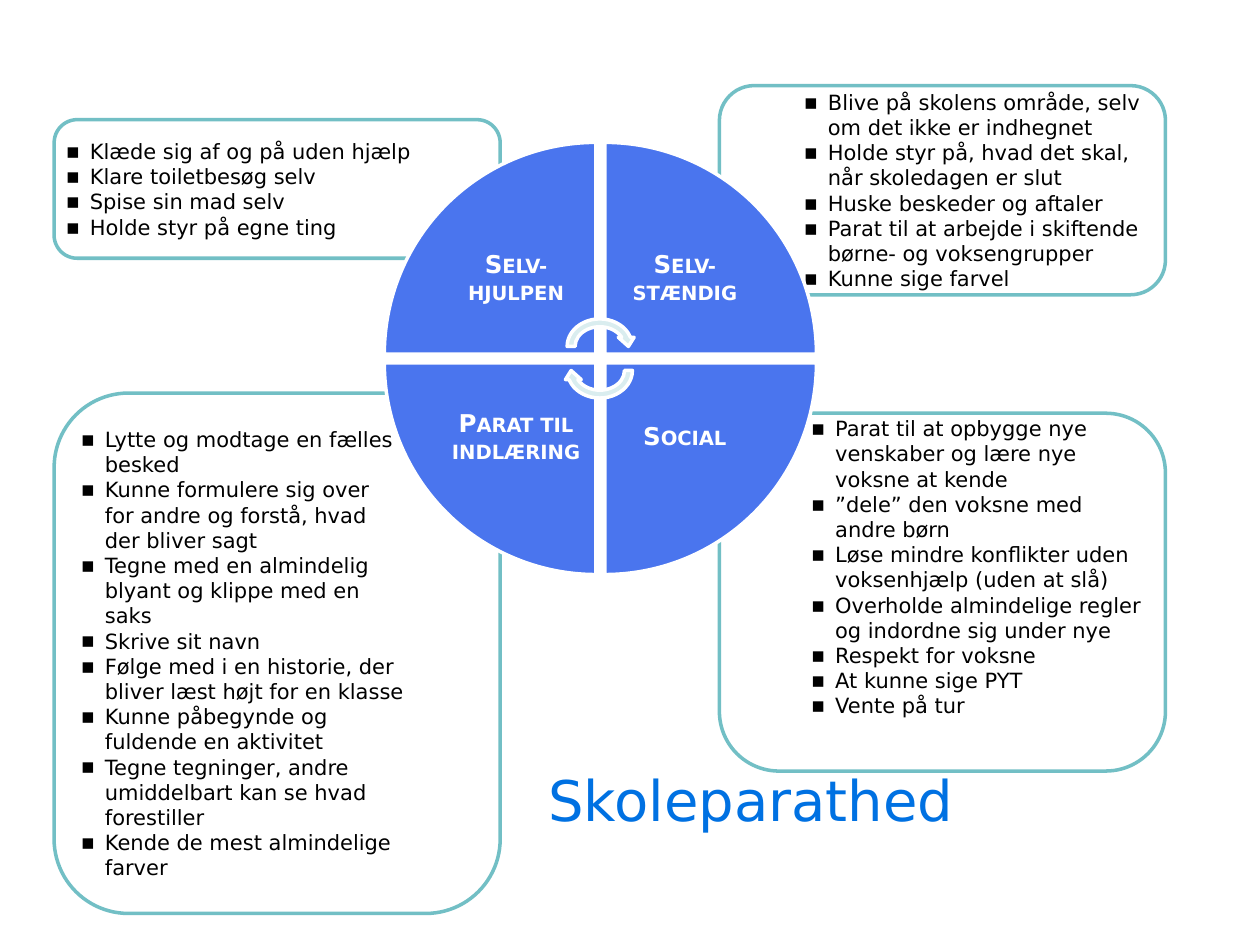
from lxml.etree import SubElement
from pptx import Presentation
from pptx.dml.color import RGBColor
from pptx.enum.shapes import MSO_SHAPE
from pptx.enum.text import MSO_ANCHOR, PP_ALIGN
from pptx.oxml.ns import qn
from pptx.util import Inches, Pt

THEME = {
    "font": "DejaVu Sans",
    "title": "0071E2", "ink": "000000", "paper": "FFFFFF",
    "frame": "72BFC5", "wedge": "4A75EE", "arrow": "DAEDEF",
    "title_pt": 32, "label_pt": 14, "list_pt": 12, "line_pt": 2,
}
TITLE = "Skoleparathed"

# (column, row, label, top, height, bottom inset, points)
PARTS = [
    (0, 0, "Selv-hjulpen", 0.95, 1.1, 0.04, [
        "Klæde sig af og på uden hjælp",
        "Klare toiletbesøg selv",
        "Spise sin mad selv",
        "Holde styr på egne ting"]),
    (0, 1, "Parat til indlæring", 3.12, 4.13, 0.04, [
        "Lytte og modtage en fælles besked",
        "Kunne formulere sig over for andre og forstå, hvad der bliver sagt",
        "Tegne med en almindelig blyant og klippe med en saks",
        "Skrive sit navn",
        "Følge med i en historie, der bliver læst højt for en klasse",
        "Kunne påbegynde og fuldende en aktivitet",
        "Tegne tegninger, andre umiddelbart kan se hvad forestiller",
        "Kende de mest almindelige farver"]),
    (1, 0, "Selv-stændig", 0.68, 1.66, 0.04, [
        "Blive på skolens område, selv om det ikke er indhegnet",
        "Holde styr på, hvad det skal, når skoledagen er slut",
        "Huske beskeder og aftaler",
        "Parat til at arbejde i skiftende børne- og voksengrupper",
        "Kunne sige farvel"]),
    (1, 1, "Social", 3.28, 2.84, 0.44, [
        "Parat til at opbygge nye venskaber og lære nye voksne at kende",
        "”dele” den voksne med andre børn",
        "Løse mindre konflikter uden voksenhjælp (uden at slå)",
        "Overholde almindelige regler og indordne sig under nye",
        "Respekt for voksne",
        "At kunne sige PYT",
        "Vente på tur"]),
]

CARD_X, CARD_W = (0.43, 5.71), 3.54
WHEEL_X, WHEEL_Y = 3.05, 1.13
WEDGE, STEP, LABEL = 1.68, 1.75, 1.19
ARROW_X, ARROW_W, ARROW_H = 4.47, 0.58, 0.5
ARROWS = [(2.5, 0), (2.69, 180)]
TURN = {(0, 0): 0, (1, 0): 90, (1, 1): 180, (0, 1): 270}


def color(key):
    return RGBColor.from_string(THEME[key])


def draw(home, kind, box, fill, line, turn=0):
    shape = home.add_shape(kind, *map(Inches, box))
    shape.shadow.inherit = False
    shape.fill.solid()
    shape.fill.fore_color.rgb = color(fill)
    shape.line.color.rgb = color(line)
    shape.line.width = Pt(THEME["line_pt"])
    shape.rotation = turn
    return shape


def setup(shape, left, top, right, bottom):
    """Wrap and centre the text vertically inside the given insets."""
    frame = shape.text_frame
    frame.word_wrap = True
    frame.vertical_anchor = MSO_ANCHOR.MIDDLE
    frame.margin_left, frame.margin_top = Inches(left), Inches(top)
    frame.margin_right, frame.margin_bottom = Inches(right), Inches(bottom)
    return frame


def write(para, text, size, ink, align=PP_ALIGN.CENTER):
    para.alignment = align
    run = para.add_run()
    run.text = text
    run.font.name = THEME["font"]
    run.font.size = Pt(THEME[size])
    run.font.color.rgb = color(ink)
    return run


def bullet(para):
    props = para._p.get_or_add_pPr()
    props.set("marL", str(Inches(0.19)))
    props.set("indent", str(Inches(-0.19)))
    SubElement(props, qn("a:buFont"), typeface=THEME["font"])
    SubElement(props, qn("a:buChar"), char="▪")


def card(home, col, top, high, foot, points):
    shape = draw(home, MSO_SHAPE.ROUNDED_RECTANGLE,
                 (CARD_X[col], top, CARD_W, high), "paper", "frame")
    left, right = ((0.04, 0.59), (0.59, 0.04))[col]
    frame = setup(shape, left, 0.04, right, foot)
    for i, point in enumerate(points):
        para = frame.add_paragraph() if i else frame.paragraphs[0]
        bullet(para)
        write(para, point, "list_pt", "ink", PP_ALIGN.LEFT)


def sector(home, col, row, label):
    x, y = WHEEL_X + col * STEP, WHEEL_Y + row * STEP
    draw(home, MSO_SHAPE.PIE_WEDGE, (x, y, WEDGE, WEDGE),
         "wedge", "paper", TURN[col, row])
    # The label sits in the corner nearest the hub.
    inner = WEDGE - LABEL
    spot = (x + (1 - col) * inner, y + (1 - row) * inner, LABEL, LABEL)
    text = home.add_textbox(*map(Inches, spot))
    frame = setup(text, 0.08 * col, 0.12, 0.08 * (1 - col), 0.12)
    para = frame.paragraphs[0]
    para.line_spacing = 0.9
    run = write(para, label, "label_pt", "paper")
    run.font.bold = True
    run.font._element.set("cap", "small")


def main():
    deck = Presentation()
    deck.slide_width, deck.slide_height = Inches(10), Inches(7.5)
    shapes = deck.slides.add_slide(deck.slide_layouts[6]).shapes

    title = shapes.add_textbox(*map(Inches, (2.4, 5.72, 7.12, 1.25)))
    frame = setup(title, 0.1, 0.05, 0.1, 0.05)
    write(frame.paragraphs[0], TITLE, "title_pt", "title")

    for col, _, _, top, high, foot, points in PARTS:
        card(shapes, col, top, high, foot, points)

    wheel = shapes.add_group_shape().shapes
    for col, row, label, *_ in PARTS:
        sector(wheel, col, row, label)
    for y, turn in ARROWS:
        draw(wheel, MSO_SHAPE.CIRCULAR_ARROW,
             (ARROW_X, y, ARROW_W, ARROW_H), "arrow", "paper", turn)

    deck.save("out.pptx")


if __name__ == "__main__":
    main()
